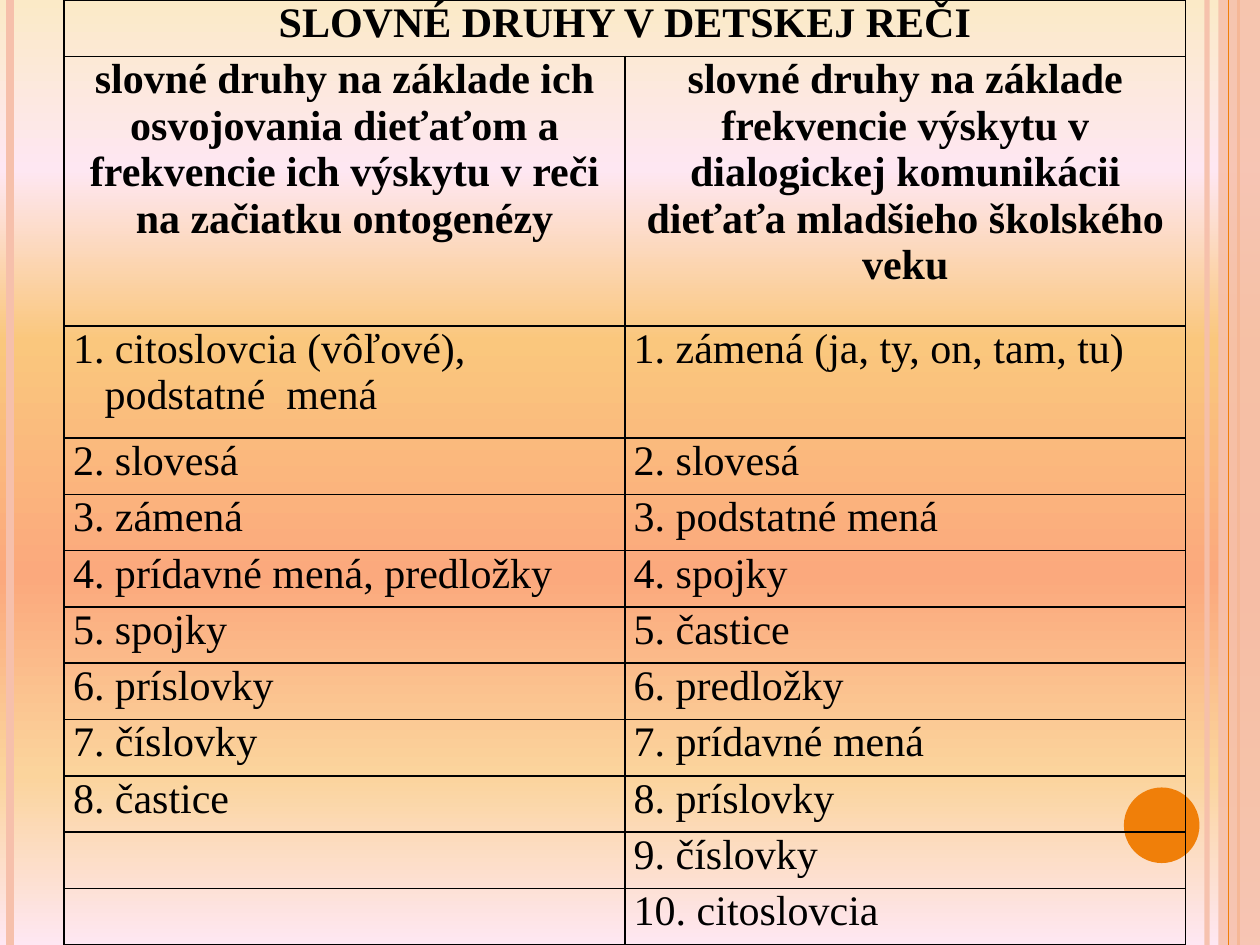
from dataclasses import dataclass
from itertools import zip_longest

from pptx import Presentation
from pptx.dml.color import RGBColor
from pptx.enum.shapes import MSO_CONNECTOR, MSO_SHAPE
from pptx.enum.text import PP_ALIGN
from pptx.oxml import parse_xml
from pptx.oxml.ns import nsdecls
from pptx.util import Inches, Pt


@dataclass(frozen=True)
class Theme:
    orange: str = "F07F09"
    peach: str = "F6C0AB"
    ink: str = "000000"
    font: str = "Times New Roman"
    size: float = 24
    border: float = 1
    gradient: tuple = ((0, "FBEAC7"), (18, "FEE7F2"), (36, "FAC77D"),
                       (61, "FBA97D"), (82, "FBD49C"), (100, "FEE7F2"))


TITLE = "SLOVNÉ DRUHY V DETSKEJ REČI"
HEADINGS = (
    "slovné druhy na základe ich osvojovania dieťaťom a frekvencie ich výskytu v reči na začiatku ontogenézy",
    "slovné druhy na základe frekvencie výskytu v dialogickej komunikácii dieťaťa mladšieho školského veku",
)
EARLY_SPEECH = ("citoslovcia (vôľové), podstatné  mená", "slovesá", "zámená",
                "prídavné mená, predložky", "spojky", "príslovky", "číslovky", "častice")
SCHOOL_AGE = ("zámená (ja, ty, on, tam, tu)", "slovesá", "podstatné mená", "spojky", "častice",
              "predložky", "prídavné mená", "príslovky", "číslovky", "citoslovcia")

SLIDE_WIDTH, SLIDE_HEIGHT = 10, 7.5
TABLE_LEFT, COLUMN_WIDTH = 0.51, 4.45
HEADING_HEIGHT, FIRST_ITEM_HEIGHT = 2.14, 0.89


def numbered(names):
    return [f"{number}. {name}" for number, name in enumerate(names, 1)]


def color_xml(color, opacity=100):
    return f'<a:srgbClr val="{color}"><a:alpha val="{opacity * 1000}"/></a:srgbClr>'


def set_opacity(fill_parent, opacity):
    """Make the solid colour inside an element partly transparent."""
    color = fill_parent.xpath(".//a:solidFill/a:srgbClr")[0]
    color.append(parse_xml(f'<a:alpha {nsdecls("a")} val="{opacity * 1000}"/>'))


class SlideBuilder:
    def __init__(self, page, theme):
        self.page = page
        self.theme = theme

    def background(self):
        self.page.background.fill.gradient()
        gradient = self.page.element.xpath(".//p:bgPr/a:gradFill")[0]
        stops = "".join(f'<a:gs pos="{position * 1000}">{color_xml(color)}</a:gs>'
                        for position, color in self.theme.gradient)
        gradient.getparent().replace(gradient, parse_xml(
            f'<a:gradFill {nsdecls("a")} rotWithShape="1"><a:gsLst>{stops}</a:gsLst>'
            '<a:lin ang="5400000" scaled="0"/></a:gradFill>'))

    def vertical_line(self, x, color, width, opacity=100):
        line = self.page.shapes.add_connector(
            MSO_CONNECTOR.STRAIGHT, Inches(x), 0, Inches(x), Inches(SLIDE_HEIGHT))
        line.line.color.rgb = RGBColor.from_string(color)
        line.line.width = Pt(width)
        properties = line.element.spPr
        if opacity < 100:
            set_opacity(properties, opacity)
        properties.append(parse_xml(f'<a:effectLst {nsdecls("a")}/>'))

    def shape(self, kind, bounds, color, opacity=100):
        shape = self.page.shapes.add_shape(kind, *map(Inches, bounds))
        shape.shadow.inherit = False
        shape.fill.solid()
        shape.fill.fore_color.rgb = RGBColor.from_string(color)
        shape.line.fill.background()
        if opacity < 100:
            set_opacity(shape.element.spPr, opacity)

    def table(self, rows, heights):
        columns = len(rows[-1])
        frame = self.page.shapes.add_table(
            len(rows), columns, Inches(TABLE_LEFT), 0,
            Inches(columns * COLUMN_WIDTH), Inches(sum(heights)))
        table = frame.table
        table.first_row = table.horz_banding = False
        for column in table.columns:
            column.width = Inches(COLUMN_WIDTH)
        for row, height in zip(table.rows, heights):
            row.height = Inches(height)
        for row_index, texts in enumerate(rows):
            for column_index, text in enumerate(texts):
                cell = table.cell(row_index, column_index)
                self.cell_frame(cell)
                if text:
                    self.cell_text(cell, text, heading=row_index < 2)
        table.cell(0, 0).merge(table.cell(0, columns - 1))
        return table

    def cell_frame(self, cell):
        properties = cell._tc.get_or_add_tcPr()
        for side in "LRTB":
            properties.append(parse_xml(
                f'<a:ln{side} {nsdecls("a")} w="{Pt(self.theme.border)}">'
                f'<a:solidFill>{color_xml(self.theme.ink)}</a:solidFill></a:ln{side}>'))
        cell.fill.background()
        margins = {"margin_left": 0.07, "margin_right": 0.07, "margin_top": 0, "margin_bottom": 0}
        for name, value in margins.items():
            setattr(cell, name, Inches(value))

    def cell_text(self, cell, text, heading):
        para = cell.text_frame.paragraphs[0]
        para.alignment = PP_ALIGN.CENTER if heading else PP_ALIGN.LEFT
        span = para.add_run()
        span.text = text
        formats = {"name": self.theme.font, "size": Pt(self.theme.size), "bold": heading}
        for name, value in formats.items():
            setattr(span.font, name, value)
        span.font.color.rgb = RGBColor.from_string(self.theme.ink)


def hang_indent(cell, indent):
    properties = cell.text_frame.paragraphs[0]._p.get_or_add_pPr()
    properties.set("marL", str(Inches(indent)))
    properties.set("indent", str(-Inches(indent)))


def main():
    deck = Presentation()
    deck.slide_width, deck.slide_height = Inches(SLIDE_WIDTH), Inches(SLIDE_HEIGHT)
    theme = Theme()
    builder = SlideBuilder(deck.slides.add_slide(deck.slide_layouts[6]), theme)

    builder.background()
    builder.vertical_line(9.58, theme.peach, 3, opacity=93)
    builder.vertical_line(0.08, theme.peach, 4.5)
    builder.vertical_line(9.83, theme.orange, 1.5)
    builder.shape(MSO_SHAPE.RECTANGLE, (9.67, 0, 0.33, SLIDE_HEIGHT), theme.peach, opacity=87)
    builder.vertical_line(9.75, theme.orange, 0.75)
    builder.shape(MSO_SHAPE.OVAL, (8.92, 6.25, 0.6, 0.6), theme.orange)

    items = list(zip_longest(numbered(EARLY_SPEECH), numbered(SCHOOL_AGE), fillvalue=""))
    rows = [(TITLE, ""), HEADINGS, *items]
    plain_height = (SLIDE_HEIGHT - HEADING_HEIGHT - FIRST_ITEM_HEIGHT) / (len(rows) - 2)
    heights = [plain_height, HEADING_HEIGHT, FIRST_ITEM_HEIGHT] + [plain_height] * (len(rows) - 3)
    table = builder.table(rows, heights)
    hang_indent(table.cell(2, 0), 0.25)

    deck.save("out.pptx")


if __name__ == "__main__":
    main()
